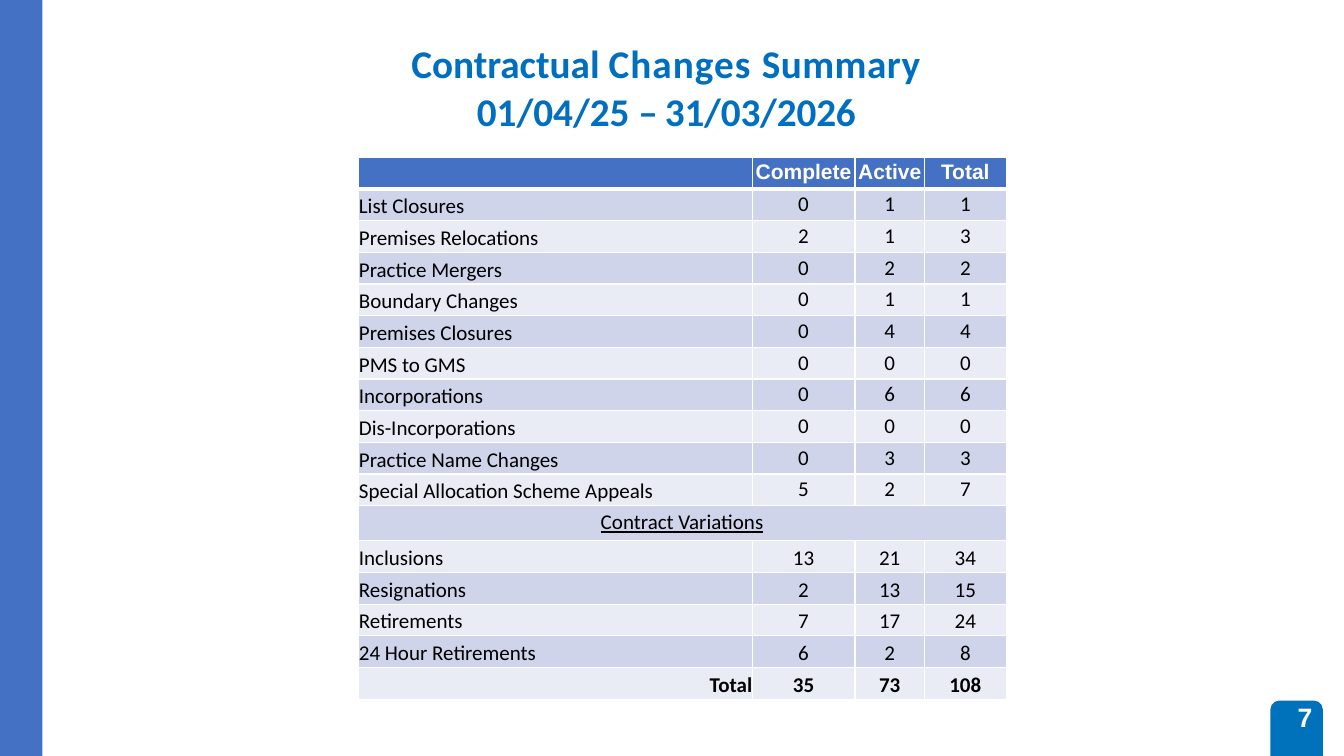
from dataclasses import dataclass

from lxml import etree
from pptx import Presentation
from pptx.dml.color import RGBColor
from pptx.enum import shapes, text
from pptx.oxml import ns
from pptx.util import Inches, Pt

WHITE, BLACK, BLUE = "FFFFFF", "000000", "4471C4"
BANDS = ("E9EBF5", "CFD4EA")
LEFT, MID, RIGHT = text.PP_ALIGN.LEFT, text.PP_ALIGN.CENTER, text.PP_ALIGN.RIGHT


@dataclass
class Row:
    label: str
    values: tuple = ()


@dataclass
class Block:
    kind: int
    box: tuple
    fill: str


BLOCKS = [
    Block(shapes.MSO_SHAPE.ROUND_2_SAME_RECTANGLE, (12.6, 6.95, 0.52, 0.55), "0071BB"),
    Block(shapes.MSO_SHAPE.RECTANGLE, (0, 0, 0.42, 7.5), BLUE),
]
ROWS = [
    Row("", ("Complete", "Active", "Total")),
    Row("List Closures", (0, 1, 1)),
    Row("Premises Relocations", (2, 1, 3)),
    Row("Practice Mergers", (0, 2, 2)),
    Row("Boundary Changes", (0, 1, 1)),
    Row("Premises Closures", (0, 4, 4)),
    Row("PMS to GMS", (0, 0, 0)),
    Row("Incorporations", (0, 6, 6)),
    Row("Dis-Incorporations", (0, 0, 0)),
    Row("Practice Name Changes", (0, 3, 3)),
    Row("Special Allocation Scheme Appeals", (5, 2, 7)),
    Row("Contract Variations"),
    Row("Inclusions", (13, 21, 34)),
    Row("Resignations", (2, 13, 15)),
    Row("Retirements", (7, 17, 24)),
    Row("24 Hour Retirements", (6, 2, 8)),
    Row("Total", (35, 73, 108)),
]
SPLIT, LAST = 11, len(ROWS) - 1
COLS = (3.91, 1.02, 0.69, 0.81)
TITLE = [("Contractual ", 0), ("Changes ", 80), ("Summary ", 40),
         ("01/04/25 ", 0), ("– ", -140), ("31/03/2026", -10)]


def hue(code: str) -> RGBColor:
    return RGBColor.from_string(code)


def put(item, **fmt) -> None:
    """Set each named attribute on the item."""
    for key, val in fmt.items():
        setattr(item, key, val)


def write(para, words: str, color: str, **fmt):
    run = para.add_run()
    run.text = words
    put(run.font, **fmt)
    run.font.color.rgb = hue(color)
    return run


def edge(cell, widths: dict) -> None:
    """Add white borders, with widths in points by side."""
    props = cell._tc.get_or_add_tcPr()
    for spot, (side, width) in enumerate(widths.items()):
        line = etree.Element(ns.qn("a:ln" + side), w=str(Pt(width)))
        fill = etree.SubElement(line, ns.qn("a:solidFill"))
        etree.SubElement(fill, ns.qn("a:srgbClr"), val=WHITE)
        props.insert(spot, line)


def draw(slide, block: Block) -> None:
    shape = slide.shapes.add_shape(block.kind, *map(Inches, block.box))
    shape.shadow.inherit = False
    shape.fill.solid()
    shape.fill.fore_color.rgb = hue(block.fill)
    shape.line.fill.background()
    if block.kind == shapes.MSO_SHAPE.ROUND_2_SAME_RECTANGLE:
        shape.adjustments[0] = 0.17


def fill_cell(cell, words: str, row: int, col: int) -> None:
    head, band, late = row == 0, row == SPLIT, row > SPLIT
    if head or not (col or late or band):
        top = 0.03 if head else 0.05
    else:
        top = 0.05 if late else 0.04 if band else 0.03
    side = MID if col or band else RIGHT if row == LAST else LEFT
    put(cell, margin_left=Inches(0.01 if side == LEFT else 0), margin_right=0,
        margin_top=Inches(top if words else 0), margin_bottom=0)
    cell.fill.solid()
    cell.fill.fore_color.rgb = hue(BLUE if head else BANDS[row % 2])
    edge(cell, {"L": 1, "R": 1, "T": 3 if row == 1 else 1, "B": 3 if head else 1})
    if words:
        para = cell.text_frame.paragraphs[0]
        para.alignment = side
        if late:
            para.line_spacing = Pt(18)
        write(para, words, WHITE if head else BLACK, size=Pt(15),
              name="Arial" if head else "Calibri",
              bold=row in (0, LAST), underline=band)


def add_grid(slide) -> None:
    box = map(Inches, (3.55, 1.56, sum(COLS), 5.38))
    table = slide.shapes.add_table(len(ROWS), len(COLS), *box).table
    put(table, first_row=False, horz_banding=False)
    for col, width in zip(table.columns, COLS):
        col.width = Inches(width)
    step = (5.38 - 0.35) / LAST
    for num, row in enumerate(ROWS):
        table.rows[num].height = Inches(0.35 if num == SPLIT else step)
        words = [row.label, *map(str, row.values)]
        words += [""] * (len(COLS) - len(words))
        for col, word in enumerate(words):
            fill_cell(table.cell(num, col), word, num, col)
    table.cell(SPLIT, 0).merge(table.cell(SPLIT, len(COLS) - 1))


def add_title(slide) -> None:
    title = slide.shapes.title
    put(title, left=Inches(4.07), top=Inches(0.38), width=Inches(5.19), height=Inches(0.97))
    frame = title.text_frame
    put(frame, margin_left=0, margin_right=0, margin_top=Inches(0.01), margin_bottom=0,
        word_wrap=True, auto_size=text.MSO_AUTO_SIZE.NONE,
        vertical_anchor=text.MSO_ANCHOR.TOP)
    para = frame.paragraphs[0]
    put(para, alignment=LEFT, line_spacing=1.01)
    props = para._p.get_or_add_pPr()
    props.set("marL", str(Inches(0.66)))
    props.set("indent", str(Inches(-0.65)))
    for words, gap in TITLE:
        run = write(para, words, "006FC0", size=Pt(28), name="Calibri", bold=True)
        run.font._element.set("spc", str(gap))


def add_page(slide) -> None:
    frame = slide.shapes.add_textbox(*map(Inches, (12.66, 6.97, 0.42, 0.37))).text_frame
    put(frame, margin_left=Inches(0.21), margin_right=0, margin_top=0, margin_bottom=0,
        word_wrap=True)
    para = frame.paragraphs[0]
    para.line_spacing = Pt(21.9)
    write(para, "7", WHITE, size=Pt(19), name="Arial", bold=True)


def main() -> None:
    deck = Presentation()
    put(deck, slide_width=Inches(13.33), slide_height=Inches(7.5))
    slide = deck.slides.add_slide(deck.slide_layouts[5])
    for block in BLOCKS:
        draw(slide, block)
    add_grid(slide)
    add_page(slide)
    add_title(slide)
    deck.save("out.pptx")


if __name__ == "__main__":
    main()
